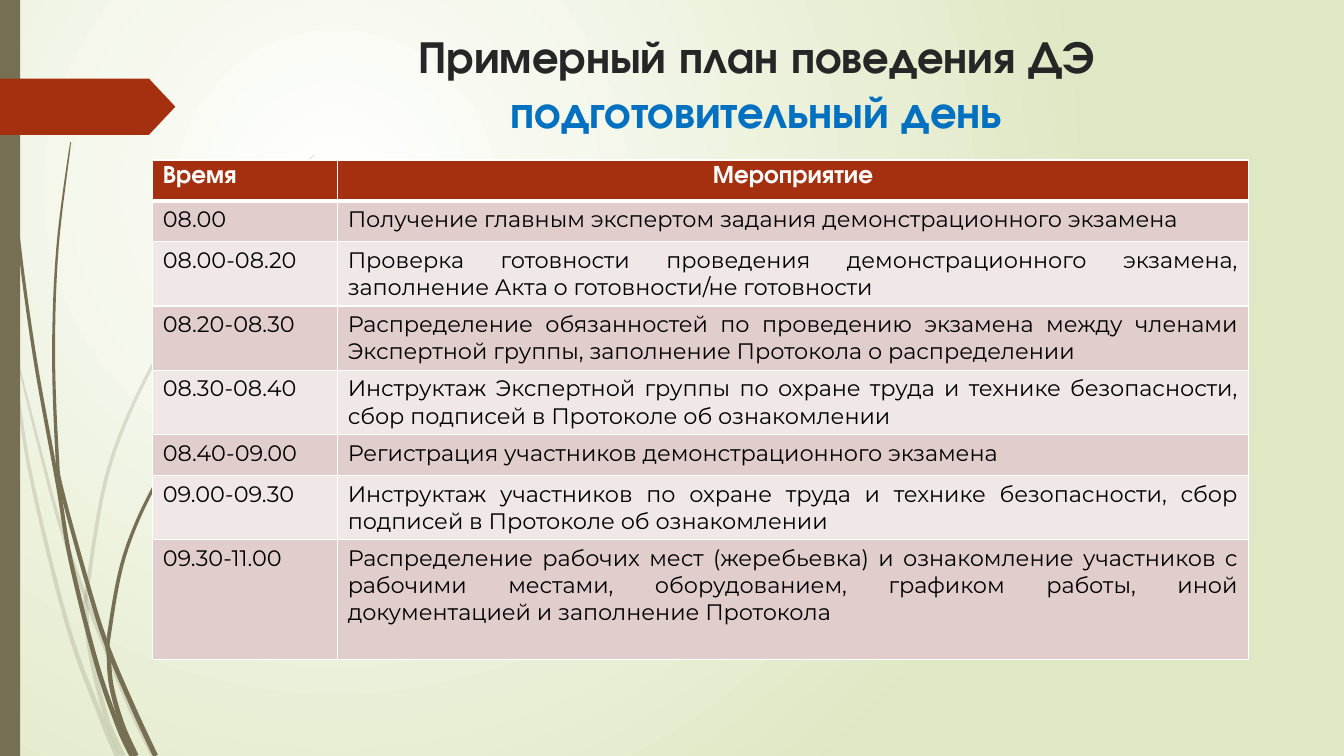
from math import hypot, sqrt

from lxml.etree import SubElement
from pptx import Presentation
from pptx.dml.color import RGBColor
from pptx.enum.shapes import MSO_SHAPE
from pptx.enum.text import MSO_ANCHOR, PP_ALIGN
from pptx.oxml.ns import qn
from pptx.util import Cm, Pt

WHITE = RGBColor(0xFF, 0xFF, 0xFF)
BLACK = RGBColor(0x00, 0x00, 0x00)
PALE_GREEN = RGBColor(0xDF, 0xE8, 0xC4)
OLIVE = RGBColor(0x76, 0x6F, 0x54)
RUST = RGBColor(0xA5, 0x30, 0x10)
CHARCOAL = RGBColor(0x26, 0x26, 0x26)
BLUE = RGBColor(0x00, 0x70, 0xC0)
ROW_FILLS = [RGBColor(0xF0, 0xE8, 0xE7), RGBColor(0xE1, 0xCD, 0xCC)]

HEADING_FONT = "TeX Gyre Adventor"
BODY_FONT = "Montserrat"
SLIDE_WIDTH, SLIDE_HEIGHT = 33.87, 19.05
CURVE_STEPS = 8

PALE_STEMS = [
    ([(0, 7.37), (0.3, 8.89), (0.76, 11.91), (1.7, 15.75), (2.57, 18.14), (2.96, 19.05)],
     [1, 4]),
    ([(0.36, 8.76), (1, 11.3), (1.52, 13.23), (2.18, 15.11), (3.18, 17.6), (3.87, 19.05)],
     [3]),
    ([(7.92, 3.89), (5.79, 6.2), (4.04, 8.84), (2.77, 11.71), (2.2, 14.83), (2.18, 15.35),
      (2.27, 16.41), (2.68, 18.08), (3.1, 19.05)], [4, 5, 7]),
]
DARK_STEMS = [
    ([(0.09, 0), (0.19, 2.79), (0.46, 5.92), (0.88, 9.02), (1.45, 12.17),
      (1.78, 14.12), (2.43, 16.71), (2.98, 18.3), (3.33, 19.05)], [4, 7]),
    ([(1.78, 3.58), (1.45, 6.22), (1.35, 8.86), (1.44, 11.46), (1.57, 12.4),
      (2.29, 15.01), (2.74, 16.38), (3.4, 17.93), (3.92, 19.05)], [3, 4, 6]),
    ([(6.6, 8.74), (5.21, 10.29), (3.99, 12.07), (3.14, 13.99), (2.74, 16.05), (2.74, 16.5),
      (2.81, 17.3), (3.08, 18.26), (3.43, 19.05)], [4, 5, 7]),
]

SCHEDULE = [
    ("Время", "Мероприятие", 1.03),
    ("08.00", "Получение главным экспертом задания демонстрационного экзамена", 1.03),
    ("08.00-08.20", "Проверка готовности проведения демонстрационного экзамена, "
     "заполнение Акта о готовности/не готовности", 1.62),
    ("08.20-08.30", "Распределение обязанностей по проведению экзамена между членами "
     "Экспертной группы, заполнение Протокола о распределении", 1.62),
    ("08.30-08.40", "Инструктаж Экспертной группы по охране труда и технике безопасности, "
     "сбор подписей в Протоколе об ознакомлении", 1.62),
    ("08.40-09.00", "Регистрация участников демонстрационного экзамена", 1.03),
    ("09.00-09.30", "Инструктаж участников по охране труда и технике безопасности, "
     "сбор подписей в Протоколе об ознакомлении", 1.62),
    ("09.30-11.00", "Распределение рабочих мест (жеребьевка) и ознакомление участников "
     "с рабочими местами, оборудованием, графиком работы, иной документацией "
     "и заполнение Протокола", 3.02),
]


def paint(shape, color, opacity=100):
    shape.shadow.inherit = False
    shape.fill.solid()
    shape.fill.fore_color.rgb = color
    shape.line.fill.background()
    if opacity < 100:
        color_element = shape._element.spPr.find(qn("a:solidFill"))[0]
        SubElement(color_element, qn("a:alpha"), val=str(opacity * 1000))


def style_run(run, font_name, size, color, bold=False):
    run.font.name = font_name
    run.font.size = Pt(size)
    run.font.color.rgb = color
    run.font.bold = bold


def add_background(slide):
    fill = slide.background.fill
    fill.gradient()
    for stop, color in zip(fill.gradient_stops, (WHITE, PALE_GREEN)):
        stop.color.rgb = color
    gradient = slide.background._cSld.find(".//" + qn("a:gradFill"))
    gradient.remove(gradient.find(qn("a:lin")))
    circle = SubElement(gradient, qn("a:path"), path="circle")
    SubElement(circle, qn("a:fillToRect"), l="50000", t="50000", r="100000", b="100000")


def smooth_curve(points):
    padded = [points[0], *points, points[-1]]
    curve = []
    for before, start, end, after in zip(padded, padded[1:], padded[2:], padded[3:]):
        for step in range(CURVE_STEPS):
            t = step / CURVE_STEPS
            curve.append(tuple(
                (2 * b + (c - a) * t + (2 * a - 5 * b + 4 * c - d) * t ** 2
                 + (3 * b - a - 3 * c + d) * t ** 3) / 2
                for a, b, c, d in zip(before, start, end, after)))
    return curve + [points[-1]]


def add_stem(slide, left, top, points, joints, opacity):
    curve = smooth_curve(points)
    last = len(curve) - 1
    left_edge, right_edge = [], []
    for index, (x, y) in enumerate(curve):
        x_before, y_before = curve[max(index - 1, 0)]
        x_after, y_after = curve[min(index + 1, last)]
        dx, dy = x_after - x_before, y_after - y_before
        half_width = (0.02 + 0.11 * sqrt(index / last)) / 2 / hypot(dx, dy)
        shift_x, shift_y = dy * half_width, dx * half_width
        left_edge.append((Cm(left + x - shift_x), Cm(top + y + shift_y)))
        right_edge.append((Cm(left + x + shift_x), Cm(top + y - shift_y)))
    ends = [0, *joints, len(points) - 1]
    for first, final in zip(ends, ends[1:]):
        section = slice(first * CURVE_STEPS, final * CURVE_STEPS + 1)
        outline = left_edge[section] + right_edge[section][::-1]
        builder = slide.shapes.build_freeform(*outline[0])
        builder.add_line_segments(outline[1:])
        paint(builder.convert_to_shape(), OLIVE, opacity)


def add_side_decoration(slide, left, top, height):
    for stems, opacity in ((PALE_STEMS, 20), (DARK_STEMS, 100)):
        for points, joints in stems:
            add_stem(slide, left, top, points, joints, opacity)
    bar = slide.shapes.add_shape(MSO_SHAPE.RECTANGLE, Cm(left), Cm(top), Cm(0.51), Cm(height))
    paint(bar, OLIVE)
    marker = slide.shapes.add_shape(
        MSO_SHAPE.PENTAGON, Cm(left), Cm(top + 1.98), Cm(4.42), Cm(1.42))
    marker.adjustments[0] = 0.47
    paint(marker, RUST)


def add_title(slide, left, top, width, height):
    box = slide.shapes.add_textbox(Cm(left), Cm(top), Cm(width), Cm(height))
    frame = box.text_frame
    frame.word_wrap = True
    frame.vertical_anchor = MSO_ANCHOR.MIDDLE
    frame.text = "Примерный план поведения ДЭ\vподготовительный день"
    paragraph = frame.paragraphs[0]
    paragraph.alignment = PP_ALIGN.CENTER
    for run, color in zip(paragraph.runs, (CHARCOAL, BLUE)):
        style_run(run, HEADING_FONT, 32.4, color, bold=True)


def add_borders(cell, bottom_width):
    properties = cell._tc.get_or_add_tcPr()
    for side, width in (("L", 1), ("R", 1), ("T", 1), ("B", bottom_width)):
        line = SubElement(properties, qn("a:ln" + side), w=str(Pt(width)))
        fill = SubElement(line, qn("a:solidFill"))
        SubElement(fill, qn("a:srgbClr"), val=str(WHITE))


def add_schedule(slide, left, top, width):
    time_width = 4.66
    height = sum(row[2] for row in SCHEDULE)
    table = slide.shapes.add_table(
        len(SCHEDULE), 2, Cm(left), Cm(top), Cm(width), Cm(height)).table
    table.columns[0].width = Cm(time_width)
    table.columns[1].width = Cm(width - time_width)
    for index, (time, event, row_height) in enumerate(SCHEDULE):
        header = index == 0
        table.rows[index].height = Cm(row_height)
        event_alignment = PP_ALIGN.CENTER if header else PP_ALIGN.JUSTIFY
        for column, (text, alignment) in enumerate(
                ((time, PP_ALIGN.LEFT), (event, event_alignment))):
            cell = table.cell(index, column)
            add_borders(cell, 3 if header else 1)
            cell.fill.solid()
            cell.fill.fore_color.rgb = RUST if header else ROW_FILLS[index % 2]
            cell.text_frame.text = text
            paragraph = cell.text_frame.paragraphs[0]
            paragraph.alignment = alignment
            if header:
                style_run(paragraph.runs[0], HEADING_FONT, 18, WHITE, bold=True)
            else:
                style_run(paragraph.runs[0], BODY_FONT, 16, BLACK)


def main():
    presentation = Presentation()
    presentation.slide_width = Cm(SLIDE_WIDTH)
    presentation.slide_height = Cm(SLIDE_HEIGHT)
    slide = presentation.slides.add_slide(presentation.slide_layouts[6])
    add_background(slide)
    add_side_decoration(slide, 0, 0, SLIDE_HEIGHT)
    add_title(slide, 6.69, 0.63, 24.77, 2.92)
    add_schedule(slide, 3.85, 4.03, 27.61)
    presentation.save("out.pptx")


if __name__ == "__main__":
    main()
